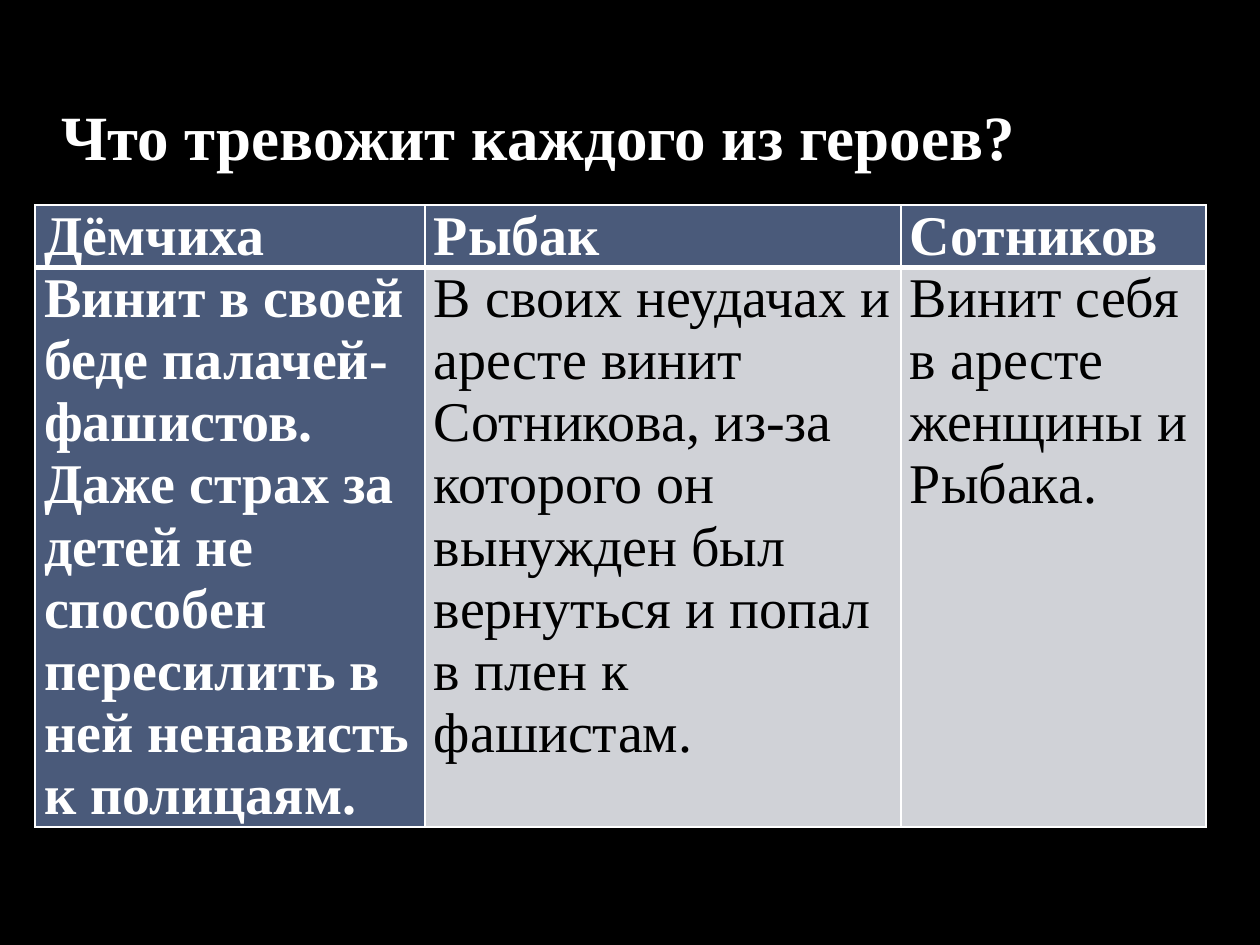
from lxml.etree import SubElement
from pptx import Presentation
from pptx.dml.color import RGBColor
from pptx.enum.text import MSO_ANCHOR
from pptx.oxml.ns import qn
from pptx.util import Emu, Pt

THEME = {
    "font": "Times New Roman",
    "title_size": 36,
    "table_size": 32,
    "background": "000000",
    "light": "FFFFFF",
    "dark": "000000",
    "accent": "4A5A7A",
    "pale": "D0D2D7",
}
EMU_PER_PX = 914400 / 126


def px(length):
    return Emu(round(length * EMU_PER_PX))


def style_text(frame, size, color, bold):
    for paragraph in frame.paragraphs:
        for run in paragraph.runs:
            run.font.name = THEME["font"]
            run.font.size = Pt(size)
            run.font.bold = bold
            run.font.color.rgb = RGBColor.from_string(color)


deck = Presentation()
deck.slide_width, deck.slide_height = px(1260), px(945)
slide = deck.slides.add_slide(deck.slide_layouts[6])
slide.background.fill.solid()
slide.background.fill.fore_color.rgb = RGBColor.from_string(THEME["background"])

heroes = [
    ("Дёмчиха", 390,
     "Винит в своей беде палачей-фашистов. Даже страх за детей не способен "
     "пересилить в ней ненависть к полицаям."),
    ("Рыбак", 476,
     "В своих неудачах и аресте винит Сотникова, из-за которого он вынужден "
     "был вернуться и попал в плен к фашистам."),
    ("Сотников", 305, "Винит себя в аресте женщины и Рыбака."),
]
row_heights = [62, 559]
worries = slide.shapes.add_table(
    len(row_heights), len(heroes), px(35), px(205),
    px(sum(width for _, width, _ in heroes)), px(sum(row_heights)),
).table
for row, height in zip(worries.rows, row_heights):
    row.height = px(height)

for column, (hero, width, worry) in enumerate(heroes):
    worries.columns[column].width = px(width)
    for row, wording in enumerate((hero, worry)):
        cell = worries.cell(row, column)
        cell.margin_left = cell.margin_right = px(9)
        cell.margin_top = cell.margin_bottom = 0
        cell.text_frame.text = wording
        emphasized = row == 0 or column == 0
        style_text(cell.text_frame, THEME["table_size"],
                   THEME["light"] if emphasized else THEME["dark"], emphasized)

        properties = cell._tc.get_or_add_tcPr()
        header_edge = "lnB" if row == 0 else "lnT"
        for edge in ("lnL", "lnR", "lnT", "lnB"):
            weight = Pt(3 if edge == header_edge else 1)
            line = SubElement(properties, qn(f"a:{edge}"), w=str(weight))
            fill = SubElement(line, qn("a:solidFill"))
            SubElement(fill, qn("a:srgbClr"), val=THEME["light"])

        cell.fill.solid()
        cell.fill.fore_color.rgb = RGBColor.from_string(
            THEME["accent"] if emphasized else THEME["pale"])

question = slide.shapes.add_textbox(px(49), px(32), px(1058), px(147)).text_frame
question.word_wrap = True
question.vertical_anchor = MSO_ANCHOR.BOTTOM
question.text = "Что тревожит каждого из героев?"
style_text(question, THEME["title_size"], THEME["light"], True)

deck.save("out.pptx")
